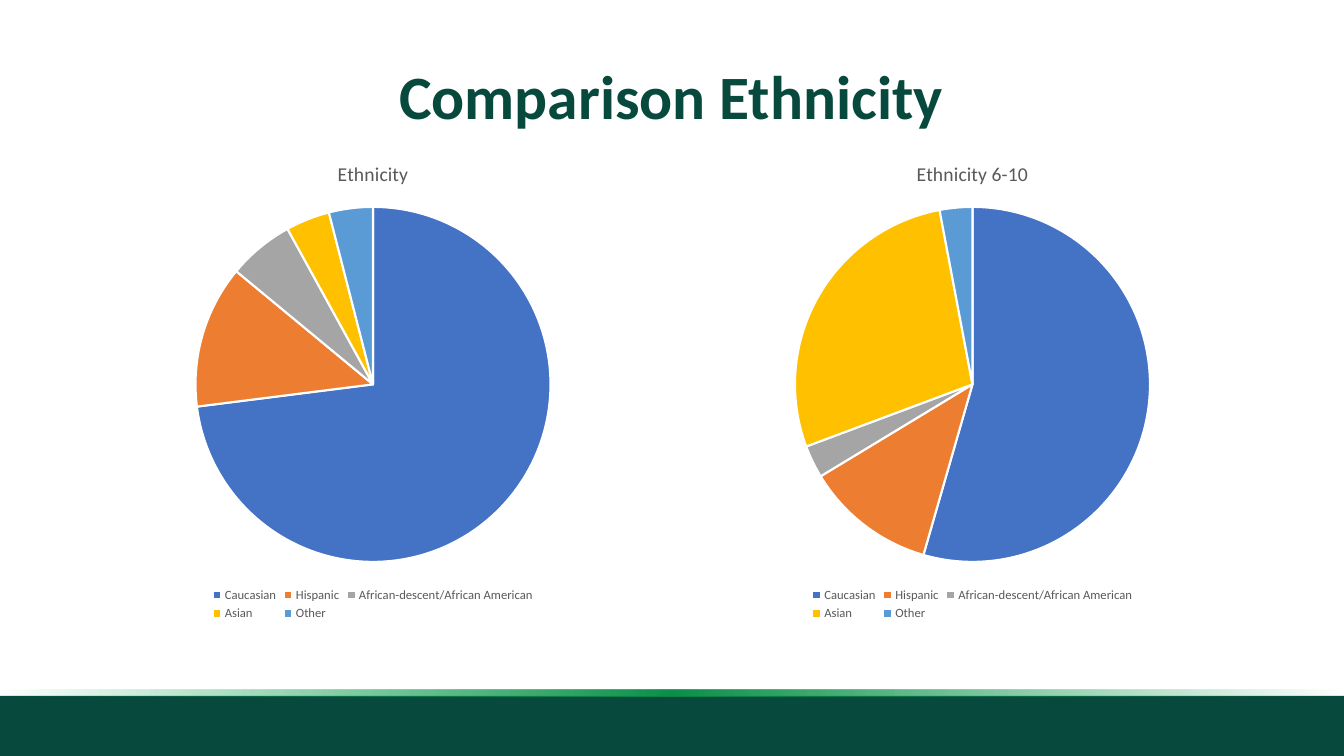
import dataclasses

import pptx
import pptx.chart.data
import pptx.dml.color
import pptx.enum.chart
import pptx.enum.shapes
import pptx.enum.text
import pptx.oxml
import pptx.oxml.ns
import pptx.util

EMU_PER_PX = 914400 / 100.8
SLIDE_WIDTH, SLIDE_HEIGHT = 1344, 756
CHART_TOP, CHART_HEIGHT = 142, 483
PIE_TOP, PIE_DIAMETER = 65, 355
GROUPS = ["Caucasian", "Hispanic", "African-descent/African American", "Asian", "Other"]


@dataclasses.dataclass(frozen=True)
class Theme:
    font: str = "Calibri"
    dark_green: str = "07493C"
    stripe: tuple = (("0D9D4F", 0), ("0C9049", 100), ("0FAB56", 0))
    chart_text: str = "595959"
    slice_border: str = "FFFFFF"
    slices: tuple = ("4472C4", "ED7D31", "A5A5A5", "FFC000", "5B9BD5")
    title_size: int = 44
    chart_title_size: int = 14
    legend_size: int = 9


THEME = Theme()


def px(length):
    return pptx.util.Emu(round(length * EMU_PER_PX))


def rgb(value):
    return pptx.dml.color.RGBColor.from_string(value)


def style_font(font, size, color, bold=False):
    font.name = THEME.font
    font.size = pptx.util.Pt(size)
    font.bold = bold
    font.color.rgb = rgb(color)


def add_title(slide, text, left, top, width, height):
    title = slide.shapes.title
    title.left, title.top, title.width, title.height = map(px, (left, top, width, height))
    title.text_frame.vertical_anchor = pptx.enum.text.MSO_ANCHOR.MIDDLE
    heading = title.text_frame.paragraphs[0]
    heading.alignment = pptx.enum.text.PP_ALIGN.CENTER
    heading.line_spacing = 0.9
    run = heading.add_run()
    run.text = text
    style_font(run.font, THEME.title_size, THEME.dark_green, bold=True)


def add_band(slide, top, height):
    band = slide.shapes.add_shape(
        pptx.enum.shapes.MSO_SHAPE.RECTANGLE, 0, px(top), px(SLIDE_WIDTH), px(height))
    band.shadow.inherit = False
    band.fill.solid()
    band.fill.fore_color.rgb = rgb(THEME.dark_green)
    band.line.fill.background()
    return band


def fade_ends(band):
    """Fill the band with a gradient that is clear at both ends."""
    stops = "".join(
        f'<a:gs pos="{index * 50000}"><a:srgbClr val="{color}">'
        f'<a:alpha val="{opacity * 1000}"/></a:srgbClr></a:gs>'
        for index, (color, opacity) in enumerate(THEME.stripe))
    gradient = pptx.oxml.parse_xml(
        f'<a:gradFill {pptx.oxml.ns.nsdecls("a")} rotWithShape="1"><a:gsLst>{stops}</a:gsLst>'
        '<a:lin ang="10800000" scaled="0"/></a:gradFill>')
    properties = band.element.spPr
    solid = properties.find(pptx.oxml.ns.qn("a:solidFill"))
    properties.replace(solid, gradient)


def place_pie(chart, chart_width):
    """Centre the pie across the chart at a fixed diameter."""
    plot_area = chart.element.find(".//" + pptx.oxml.ns.qn("c:plotArea"))
    for layout in plot_area.findall(pptx.oxml.ns.qn("c:layout")):
        plot_area.remove(layout)
    fractions = {
        "x": (chart_width - PIE_DIAMETER) / 2 / chart_width,
        "y": PIE_TOP / CHART_HEIGHT,
        "w": PIE_DIAMETER / chart_width,
        "h": PIE_DIAMETER / CHART_HEIGHT,
    }
    sizes = "".join(f'<c:{key} val="{value:.4f}"/>' for key, value in fractions.items())
    plot_area.insert(0, pptx.oxml.parse_xml(
        f'<c:layout {pptx.oxml.ns.nsdecls("c")}><c:manualLayout><c:layoutTarget val="inner"/>'
        f'<c:xMode val="edge"/><c:yMode val="edge"/>{sizes}</c:manualLayout></c:layout>'))


def add_pie(slide, title, shares, left, width):
    data = pptx.chart.data.CategoryChartData(number_format="0")
    data.categories = GROUPS
    data.add_series("Series 1", shares)
    chart = slide.shapes.add_chart(
        pptx.enum.chart.XL_CHART_TYPE.PIE,
        px(left), px(CHART_TOP), px(width), px(CHART_HEIGHT), data).chart
    style_font(chart.font, 10, "000000")

    # Chart title
    chart.has_title = True
    run = chart.chart_title.text_frame.paragraphs[0].add_run()
    run.text = title
    style_font(run.font, THEME.chart_title_size, THEME.chart_text)

    # Legend
    chart.has_legend = True
    chart.legend.position = pptx.enum.chart.XL_LEGEND_POSITION.BOTTOM
    chart.legend.include_in_layout = False
    style_font(chart.legend.font, THEME.legend_size, THEME.chart_text)

    # Slices
    pie = chart.plots[0]
    pie.vary_by_categories = True
    for index, color in enumerate(THEME.slices):
        piece = pie.series[0].points[index].format
        piece.fill.solid()
        piece.fill.fore_color.rgb = rgb(color)
        piece.line.color.rgb = rgb(THEME.slice_border)
        piece.line.width = pptx.util.Pt(1.5)
    place_pie(chart, width)


def main():
    deck = pptx.Presentation()
    deck.slide_width, deck.slide_height = px(SLIDE_WIDTH), px(SLIDE_HEIGHT)
    slide = deck.slides.add_slide(deck.slide_layouts.get_by_name("Title Only"))

    # Footer band and the stripe above it
    add_band(slide, 696, 60)
    fade_ends(add_band(slide, 690, 6))

    # Heading and the two pies
    add_title(slide, "Comparison Ethnicity", 92, 40, 1159, 120)
    add_pie(slide, "Ethnicity 6-10", (55, 12, 3, 28, 3), 636, 673)
    add_pie(slide, "Ethnicity", (73, 13, 6, 4, 4), 0, 746)

    deck.save("out.pptx")


if __name__ == "__main__":
    main()
